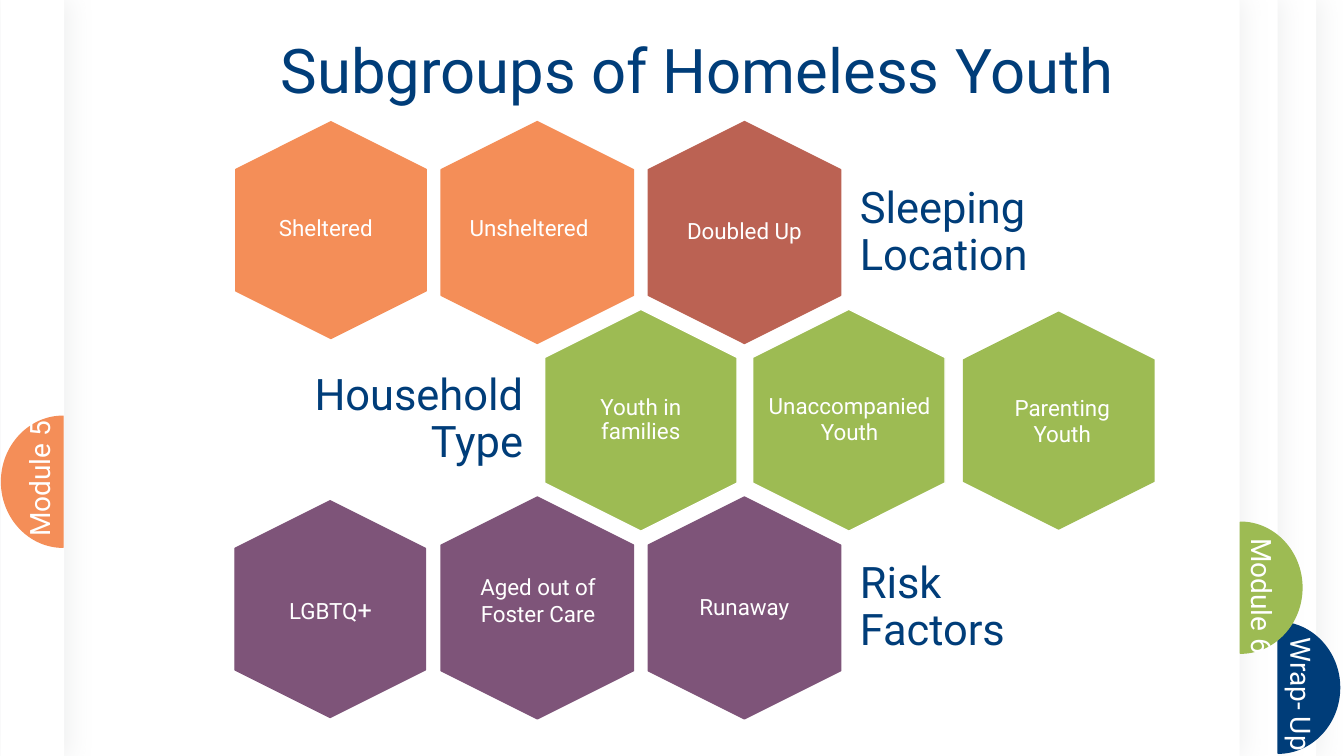
from dataclasses import dataclass

from lxml import etree
from pptx import Presentation
from pptx.dml.color import RGBColor
from pptx.enum.shapes import MSO_SHAPE
from pptx.enum.text import MSO_ANCHOR, PP_ALIGN
from pptx.oxml.ns import qn
from pptx.util import Cm, Pt

HEXAGON, RECTANGLE = MSO_SHAPE.HEXAGON, MSO_SHAPE.RECTANGLE
LEFT, CENTER, RIGHT = PP_ALIGN.LEFT, PP_ALIGN.CENTER, PP_ALIGN.RIGHT
TOP, MIDDLE = MSO_ANCHOR.TOP, MSO_ANCHOR.MIDDLE

FONT = "Roboto"
COLORS = {
    "white": "FFFFFF", "navy": "003D79", "orange": "F48E58", "brick": "BB6253",
    "green": "9DBB53", "plum": "7E5479", "shade": "D3D5D6",
}
INNER_HEXAGON = (5.59, 4.85)
OUTER_HEXAGON = (5.46, 4.8)
TAB_SIZE = (1.55, 3.3)
TAB_CAPTION_SIZE = (1.37, 4.06)
CURVE = 0.55
FIRST_ROW_Y, ROW_PITCH = 5.86, 4.73


@dataclass
class Subgroup:
    """A hexagon and its label, each offset from a common grid point."""
    runs: list
    color: str
    line: str
    hexagon: tuple = INNER_HEXAGON
    offset: tuple = (0, 0)
    size: tuple = (3.35, 3.84)
    align: int = CENTER
    compact: bool = False
    shift: tuple = (0, 0)


@dataclass
class Category:
    """A row of subgroups with its heading."""
    heading: str
    heading_left: float
    heading_width: float
    heading_align: int
    first_x: float
    pitch: float
    subgroups: list


CATEGORIES = [
    Category("Sleeping Location", 21.34, 6.22, LEFT, 8.32, 5.22, [
        Subgroup([("Sheltered", 16)], "orange", "orange", OUTER_HEXAGON,
                 (0.24, -0.12), (3.56, 0.94), LEFT, shift=(0.02, -0.06)),
        Subgroup([("Unsheltered", 16)], "orange", "orange", INNER_HEXAGON,
                 (0.23, -0.12), (4.37, 0.94), LEFT),
        Subgroup([("Doubled Up", 16)], "brick", "brick", compact=True),
    ]),
    Category("Household Type", 7.49, 6.02, RIGHT, 16.15, 5.24, [
        Subgroup([("Youth in families", 16)], "green", "white", compact=True),
        Subgroup([("Unaccompanied Youth", 16)], "green", "white", INNER_HEXAGON,
                 (0.02, -0.03), (5.49, 1.63)),
        Subgroup([("Parenting Youth", 16)], "green", "green", OUTER_HEXAGON,
                 (0.14, 0.02), (3.56, 1.63), shift=(0.05, 0.01)),
    ]),
    Category("Risk Factors", 21.34, 6.22, LEFT, 8.32, 5.22, [
        Subgroup([("LGBTQ", 16), ("+", 18)], "plum", "plum", OUTER_HEXAGON,
                 (0.01, 0.03), (3.56, 1.02), shift=(0, 0.03)),
        Subgroup([("Aged out of Foster Care", 16)], "plum", "plum", INNER_HEXAGON,
                 (0.02, 0.15), (3.56, 2.31)),
        Subgroup([("Runaway", 16)], "plum", "plum", compact=True),
    ]),
]


def rgb(name):
    """Return the named colour."""
    return RGBColor.from_string(COLORS[name])


def paint(shape, fill, line=None):
    """Give a shape its fill and its line, without a shadow."""
    shape.shadow.inherit = False
    shape.fill.solid()
    shape.fill.fore_color.rgb = rgb(fill)
    if line:
        shape.line.color.rgb = rgb(line)
        shape.line.width = Pt(1)
    else:
        shape.line.fill.background()


def add_text(slide, box, runs, color, align=LEFT, anchor=TOP, spacing=1.0, inset=None):
    """Add a wrapping text box holding one paragraph of (text, size) runs."""
    textbox = slide.shapes.add_textbox(*map(Cm, box))
    frame = textbox.text_frame
    frame.word_wrap = True
    frame.vertical_anchor = anchor
    if inset is not None:
        frame.margin_left = frame.margin_right = Cm(inset)
        frame.margin_top = frame.margin_bottom = Cm(inset)
    paragraph = frame.paragraphs[0]
    paragraph.alignment = align
    paragraph.line_spacing = spacing
    for text, size in runs:
        run = paragraph.add_run()
        run.text = text
        run.font.name = FONT
        run.font.size = Pt(size)
        run.font.color.rgb = rgb(color)
    return textbox


def add_page(slide, box):
    """Add a white page that casts a soft shadow to its right."""
    page = slide.shapes.add_shape(RECTANGLE, *map(Cm, box))
    paint(page, "white")
    effects = page.element.spPr.find(qn("a:effectLst"))
    shadow = etree.SubElement(effects, qn("a:outerShdw"), blurRad=str(Pt(17)),
                              dist=str(Pt(3)), dir="0", algn="l", rotWithShape="0")
    shade = etree.SubElement(shadow, qn("a:srgbClr"), val=COLORS["shade"])
    etree.SubElement(shade, qn("a:alpha"), val="35000")


def curve_segments(freeform):
    """Turn each three straight segments of a freeform into one Bézier curve."""
    segments = list(freeform.element.iter(qn("a:lnTo")))
    for first, second, third in zip(segments[::3], segments[1::3], segments[2::3]):
        first.tag = qn("a:cubicBezTo")
        for segment in (second, third):
            first.append(segment[0])
            segment.getparent().remove(segment)


def add_tab(slide, box, caption_at, caption, color, faces_left=False):
    """Add a half-round page tab with its sideways caption."""
    left, top, width, height = box
    flat_x, reach = (left + width, -width) if faces_left else (left, width)
    radius = height / 2
    rim = [(CURVE, -1), (1, -CURVE), (1, 0), (1, CURVE), (CURVE, 1), (0, 1)]
    builder = slide.shapes.build_freeform(Cm(flat_x), Cm(top))
    builder.add_line_segments(
        [(Cm(flat_x + reach * x), Cm(top + radius * (1 + y))) for x, y in rim], close=True)
    tab = builder.convert_to_shape()
    curve_segments(tab)
    paint(tab, color, color)
    label = add_text(slide, (*caption_at, *TAB_CAPTION_SIZE), [(caption, 20)], "white")
    label.text_frame._txBody.bodyPr.set("vert", "vert")
    label.rotation = 180 if faces_left else 0


def add_subgroup(slide, grid_x, grid_y, subgroup):
    """Add an upright hexagon and its label around a grid point."""
    width, height = subgroup.hexagon
    shift_x, shift_y = subgroup.shift
    hexagon = slide.shapes.add_shape(
        HEXAGON, Cm(grid_x + shift_x - width / 2), Cm(grid_y + shift_y - height / 2),
        Cm(width), Cm(height))
    hexagon.rotation = 90
    paint(hexagon, subgroup.color, subgroup.line)
    dx, dy = subgroup.offset
    label_width, label_height = subgroup.size
    box = (grid_x + dx - label_width / 2, grid_y + dy - label_height / 2,
           label_width, label_height)
    style = {"anchor": MIDDLE, "spacing": 0.9, "inset": 0.18} if subgroup.compact else {}
    add_text(slide, box, subgroup.runs, "white", subgroup.align, **style)


def add_category(slide, center_y, category):
    """Add a row of hexagons and the heading beside it."""
    for column, subgroup in enumerate(category.subgroups):
        add_subgroup(slide, category.first_x + column * category.pitch, center_y, subgroup)
    height = 3.35
    box = (category.heading_left, center_y - height / 2, category.heading_width, height)
    add_text(slide, box, [(category.heading, 31)], "navy", category.heading_align,
             MIDDLE, 0.9, 0.33)


def main():
    """Build the slide and save it."""
    deck = Presentation()
    deck.slide_width, deck.slide_height = Cm(33.87), Cm(19.05)
    slide = deck.slides.add_slide(deck.slide_layouts[6])
    for left, width in ((6.53, 26.64), (5.56, 26.64), (1.62, 29.62), (0.02, 1.6)):
        add_page(slide, (left, 0, width, 19.05))
    add_tab(slide, (32.21, 15.68, *TAB_SIZE), (31.98, 15.82), "Wrap- Up", "navy")
    add_tab(slide, (31.26, 13.16, *TAB_SIZE), (30.99, 13.31), "Module 6", "green")
    add_tab(slide, (0.04, 10.49, *TAB_SIZE), (0.43, 9.72), "Module 5", "orange", True)
    add_text(slide, (2.48, 0.01, 30.2, 3.68), [("Subgroups of Homeless Youth", 44)],
             "navy", CENTER, MIDDLE, 0.9)
    for row, category in enumerate(CATEGORIES):
        add_category(slide, FIRST_ROW_Y + row * ROW_PITCH, category)
    deck.save("out.pptx")


if __name__ == "__main__":
    main()
